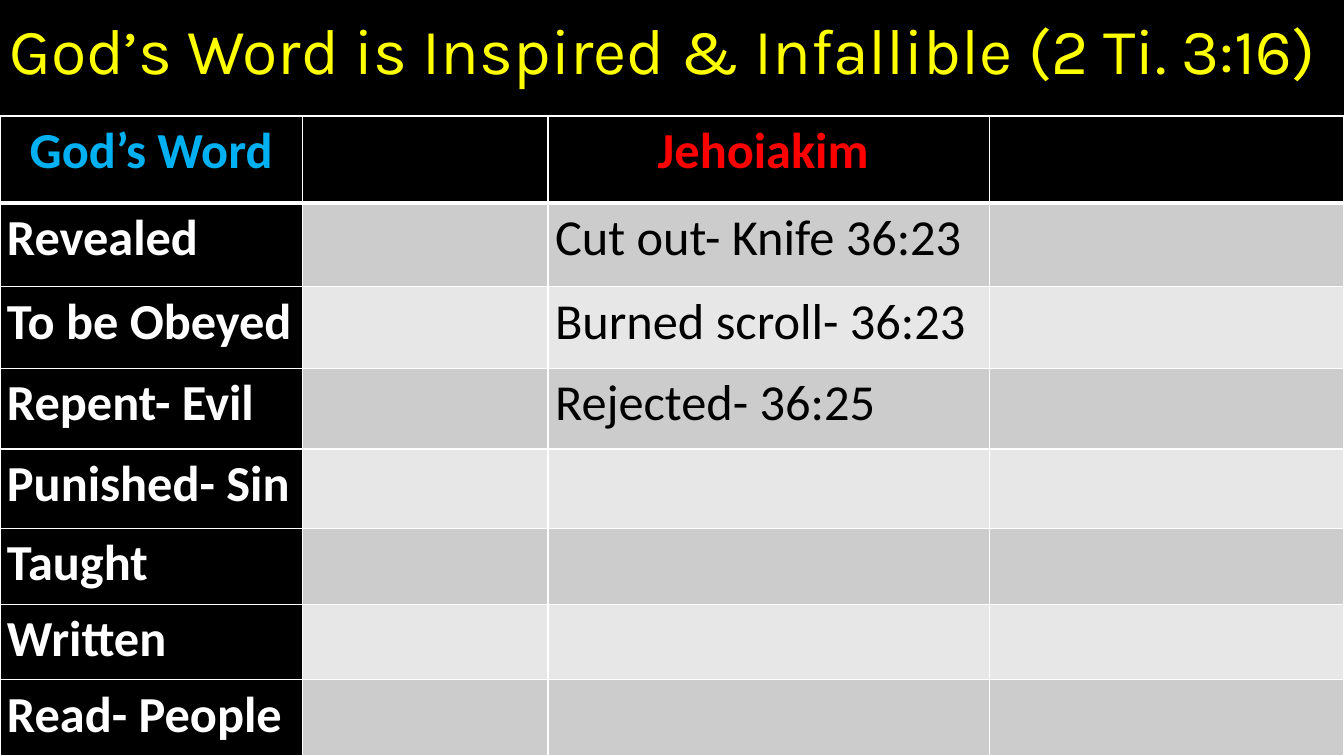
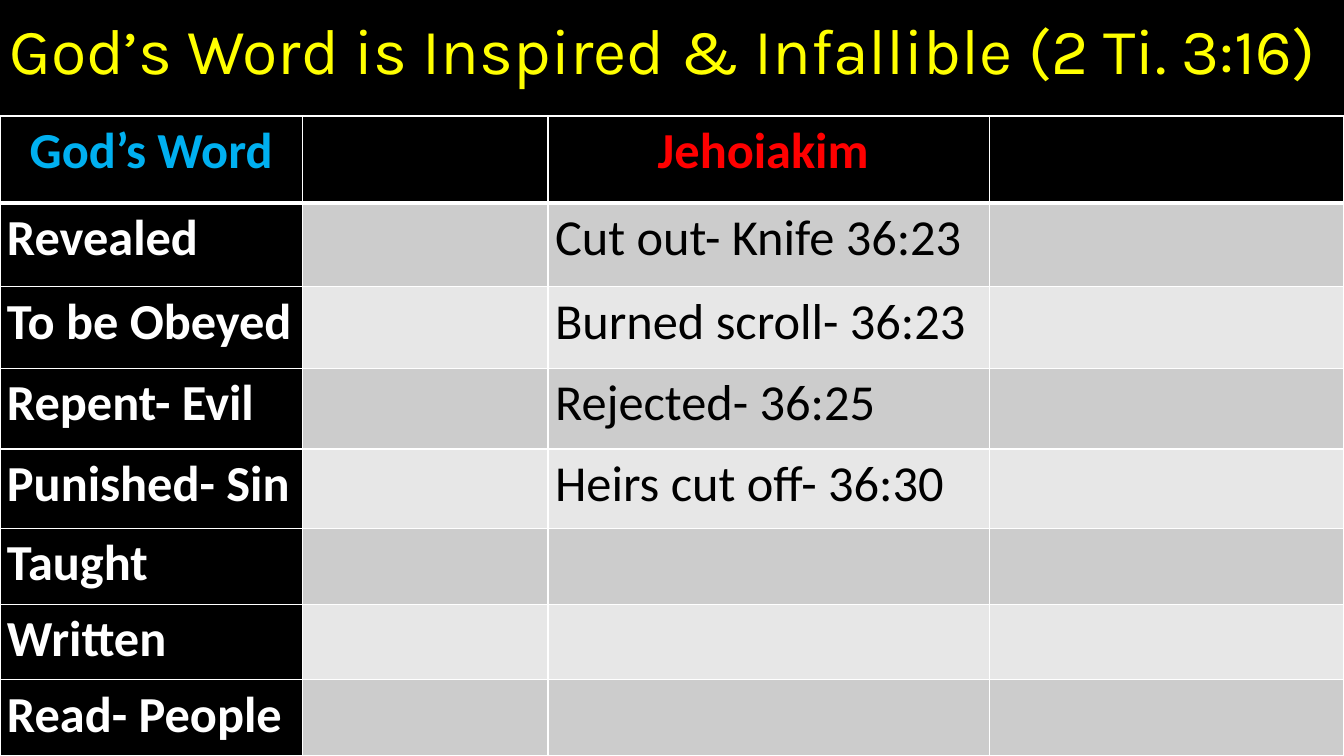
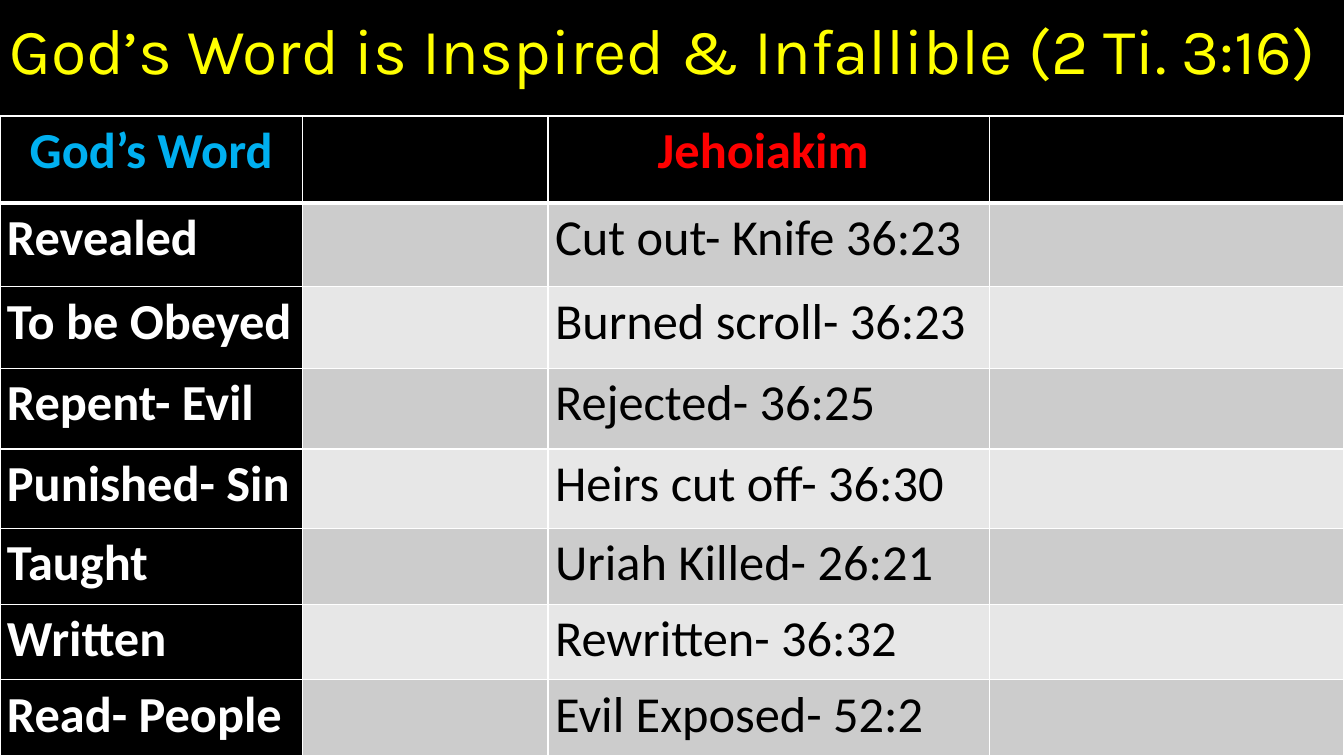
from lxml import etree
from pptx import Presentation
from pptx.dml.color import RGBColor
from pptx.enum.text import MSO_ANCHOR, PP_ALIGN
from pptx.oxml.ns import qn
from pptx.util import Pt

MIDDLE, TOP = MSO_ANCHOR.MIDDLE, MSO_ANCHOR.TOP
LEFT, CENTER = PP_ALIGN.LEFT, PP_ALIGN.CENTER

BLACK = RGBColor(0x00, 0x00, 0x00)
WHITE = RGBColor(0xFF, 0xFF, 0xFF)
YELLOW = RGBColor(0xFF, 0xFF, 0x00)
BLUE = RGBColor(0x00, 0xB0, 0xF0)
RED = RGBColor(0xFF, 0x00, 0x00)
DARK_BAND = RGBColor(0xCC, 0xCC, 0xCC)
LIGHT_BAND = RGBColor(0xE7, 0xE7, 0xE7)

SLIDE_WIDTH, SLIDE_HEIGHT = 960, 540
TABLE_TOP = 82.8
COLUMN_WIDTHS = [216, 175.5, 315.5, 253]
ROW_HEIGHTS = [62, 60, 58.5, 57.5, 56.7, 54.1, 54.1, 54.1]

TITLE = "God’s Word is Inspired & Infallible (2 Ti. 3:16)"
HEADINGS = [("God’s Word", BLUE), ("", WHITE), ("Jehoiakim ", RED), ("", WHITE)]
TEACHINGS = ["Revealed", "To be Obeyed", "Repent- Evil", "Punished- Sin",
             "Taught", "Written", "Read- People"]
JEHOIAKIM = ["Cut out- Knife 36:23", "Burned scroll- 36:23", "Rejected- 36:25",
             "Heirs cut off- 36:30", "Uriah Killed- 26:21", "Rewritten- 36:32",
             "Evil Exposed- 52:2"]
REVEALED_COUNTS = [3, 4, 7]


class Deck:
    """Holds the shared style and the slide being built."""

    def __init__(self):
        self.prs = Presentation()
        self.prs.slide_width = Pt(SLIDE_WIDTH)
        self.prs.slide_height = Pt(SLIDE_HEIGHT)
        self.slide = None

    def add_slide(self):
        self.slide = self.prs.slides.add_slide(self.prs.slide_layouts[6])
        background = self.slide.background.fill
        background.solid()
        background.fore_color.rgb = BLACK

    def set_text(self, frame, text, font_name, size, color, bold=False,
                 align=LEFT, spacing=1.0):
        paragraph = frame.paragraphs[0]
        paragraph.text = text
        paragraph.alignment = align
        paragraph.line_spacing = spacing
        font = paragraph.font
        font.name, font.size, font.bold = font_name, Pt(size), bold
        font.color.rgb = color

    def title(self, text):
        box = self.slide.shapes.add_textbox(0, 0, Pt(SLIDE_WIDTH), Pt(76.5))
        frame = box.text_frame
        frame.word_wrap = True
        frame.vertical_anchor = MIDDLE
        self.set_text(frame, text, "Karla", 46, YELLOW, spacing=0.9)

    def borders(self, cell, top, bottom):
        properties = cell._tc.get_or_add_tcPr()
        widths = {"a:lnL": 1, "a:lnR": 1, "a:lnT": top, "a:lnB": bottom}
        for tag, width in widths.items():
            line = etree.SubElement(properties, qn(tag), w=str(Pt(width)))
            fill = etree.SubElement(line, qn("a:solidFill"))
            etree.SubElement(fill, qn("a:srgbClr"), val=str(WHITE))

    def cell(self, cell, text, fill, color, bold, align, top=1, bottom=1):
        self.borders(cell, top, bottom)
        cell.fill.solid()
        cell.fill.fore_color.rgb = fill
        cell.vertical_anchor = TOP
        cell.margin_left = cell.margin_right = Pt(5)
        cell.margin_top = cell.margin_bottom = 0
        if text:
            self.set_text(cell.text_frame, text, "Calibri", 36, color, bold,
                          align, 1.07)

    def comparison(self, answers):
        table = self.slide.shapes.add_table(
            len(ROW_HEIGHTS), len(COLUMN_WIDTHS), 0, Pt(TABLE_TOP),
            Pt(sum(COLUMN_WIDTHS)), Pt(sum(ROW_HEIGHTS))).table
        table.first_row = table.horz_banding = False
        for column, width in zip(table.columns, COLUMN_WIDTHS):
            column.width = Pt(width)
        for row, height in zip(table.rows, ROW_HEIGHTS):
            row.height = Pt(height)

        # Heading row
        for col, (heading, color) in enumerate(HEADINGS):
            self.cell(table.cell(0, col), heading, BLACK, color, True, CENTER,
                      bottom=3)

        # Teachings, each with Jehoiakim's response
        for row, teaching in enumerate(TEACHINGS, start=1):
            answer = answers[row - 1] if row <= len(answers) else ""
            band = DARK_BAND if row % 2 else LIGHT_BAND
            top = 3 if row == 1 else 1
            self.cell(table.cell(row, 0), teaching, BLACK, WHITE, True, LEFT, top)
            for col, text in enumerate(["", answer, ""], start=1):
                self.cell(table.cell(row, col), text, band, BLACK, False, LEFT, top)


def main():
    deck = Deck()
    # Each slide uncovers more of the responses
    for count in REVEALED_COUNTS:
        deck.add_slide()
        deck.title(TITLE)
        deck.comparison(JEHOIAKIM[:count])
    deck.prs.save("out.pptx")


if __name__ == "__main__":
    main()
